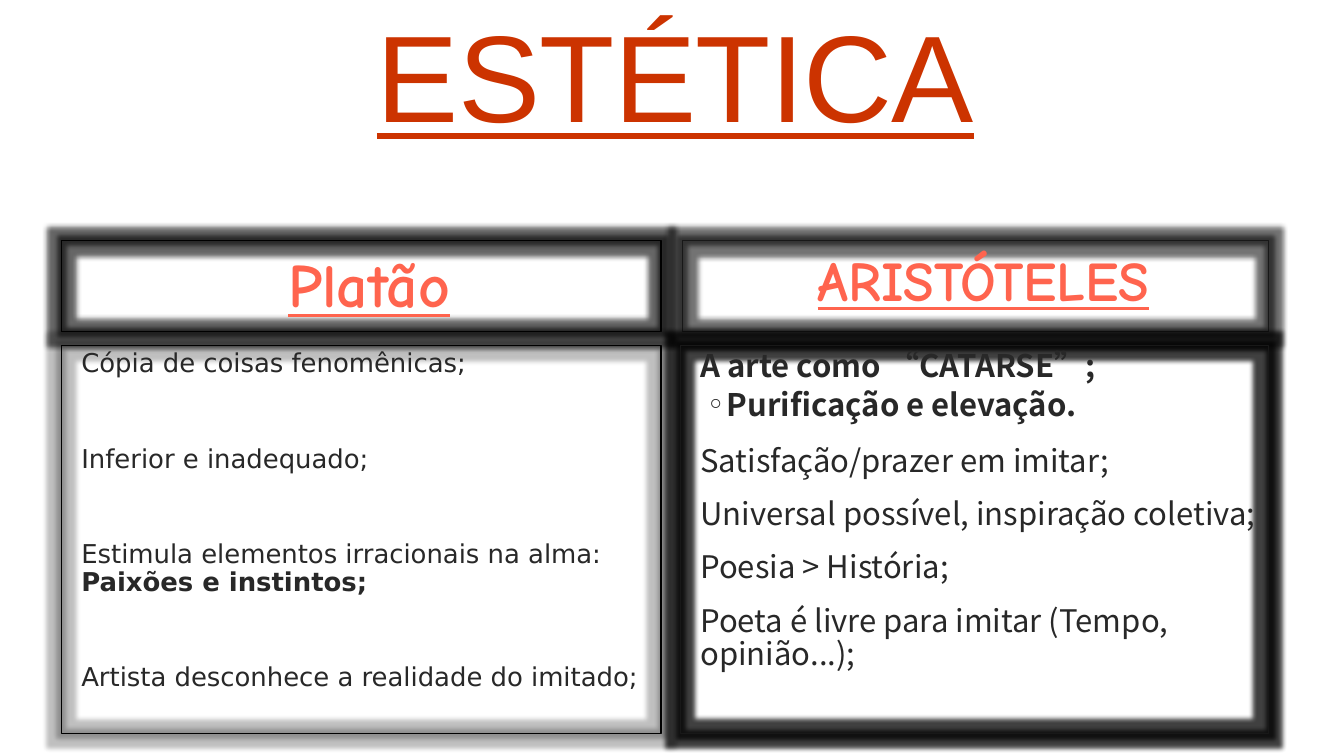
"""Build a slide comparing the aesthetics of Plato and Aristotle."""
from lxml import etree
from pptx import Presentation
from pptx.dml.color import RGBColor
from pptx.enum.shapes import MSO_SHAPE
from pptx.enum.text import MSO_ANCHOR, PP_ALIGN
from pptx.oxml.ns import qn
from pptx.util import Cm, Pt

RECT = MSO_SHAPE.RECTANGLE
TOP, MIDDLE = MSO_ANCHOR.TOP, MSO_ANCHOR.MIDDLE
LEFT, CENTER = PP_ALIGN.LEFT, PP_ALIGN.CENTER

TITLE = {
    "text": "ESTÉTICA",
    "font": {"name": "Arial", "size": Pt(88), "underline": True},
    "color": "CC3300",
}
HEADING_COLOR, BODY_COLOR = "FF644E", "282828"
GLOW_RADIUS = Cm(0.24)
HEADING_TOP, HEADING_HEIGHT = 6.07, 2.29
BODY_TOP, BODY_HEIGHT = 8.71, 9.78

PHILOSOPHERS = [
    {
        "heading": "Platão", "heading_size": 44, "heading_left": 1.55, "heading_width": 15.11,
        "body_left": 1.55, "body_width": 15.11, "border": "000000",
        "heading_glow": 60, "body_glow": 25,
        "font": "DejaVu Sans", "size": 18.5, "line_spacing": 0.9, "gap": 46,
        "ideas": [
            [("Cópia de coisas fenomênicas;", False)],
            [("Inferior e inadequado;", False)],
            [("Estimula elementos irracionais na alma: ", False), ("Paixões e instintos;", True)],
            [("Artista desconhece a realidade do imitado;", False)],
        ],
        "sub_ideas": [],
    },
    {
        "heading": "ARISTÓTELES", "heading_size": 40, "heading_left": 17.2, "heading_width": 14.76,
        "body_left": 17.15, "body_width": 14.81, "border": "181818",
        "heading_glow": 55, "body_glow": 75,
        "font": "Noto Sans CJK SC", "size": 22.2, "line_spacing": 0.9, "gap": 12,
        "ideas": [
            [("A arte como “CATARSE”;", True)],
            [("Purificação e elevação.", True)],
            [("Satisfação/prazer em imitar;", False)],
            [("Universal possível, inspiração coletiva;", False)],
            [("Poesia > História;", False)],
            [("Poeta é livre para imitar (Tempo, opinião...);", False)],
        ],
        "sub_ideas": [1],
    },
]


def rgb(value):
    return RGBColor.from_string(value)


def apply(target, values):
    for name, value in values.items():
        setattr(target, name, value)


def add_run(paragraph, text, font, color):
    run = paragraph.add_run()
    run.text = text
    apply(run.font, font)
    run.font.color.rgb = rgb(color)
    east_asian = etree.SubElement(run.font._element, qn("a:ea"))
    east_asian.set("typeface", font["name"])
    return run


def set_indent(paragraph, margin, first_line=0, bullet=None):
    properties = paragraph._p.get_or_add_pPr()
    properties.set("marL", str(Cm(margin)))
    properties.set("indent", str(Cm(first_line)))
    if bullet:
        etree.SubElement(properties, qn("a:buFont")).set("typeface", "DejaVu Sans")
        etree.SubElement(properties, qn("a:buChar")).set("char", bullet)
    else:
        etree.SubElement(properties, qn("a:buNone"))


def add_box(slide, left, top, width, height, border, glow):
    box = slide.shapes.add_shape(RECT, Cm(left), Cm(top), Cm(width), Cm(height))
    box.shadow.inherit = False
    box.fill.background()
    box.line.color.rgb = rgb(border)
    box.line.width = Pt(0.75)
    effects = box._element.spPr.find(qn("a:effectLst"))
    halo = etree.SubElement(effects, qn("a:glow"), rad=str(GLOW_RADIUS))
    shade = etree.SubElement(halo, qn("a:srgbClr"), val="000000")
    etree.SubElement(shade, qn("a:alpha"), val=str(glow * 1000))
    apply(box.text_frame, {"word_wrap": True, "vertical_anchor": TOP})
    return box.text_frame


def add_title(slide):
    frame = slide.shapes.add_textbox(Cm(3.05), Cm(0.18), Cm(27.94), Cm(3.81)).text_frame
    apply(frame, {"word_wrap": True, "vertical_anchor": MIDDLE,
                  "margin_left": 0, "margin_right": 0})
    paragraph = frame.paragraphs[0]
    apply(paragraph, {"alignment": CENTER, "line_spacing": 0.9})
    run = add_run(paragraph, TITLE["text"], TITLE["font"], TITLE["color"])
    run.font._element.set("spc", "-50")


def add_heading(slide, person):
    frame = add_box(slide, person["heading_left"], HEADING_TOP, person["heading_width"],
                    HEADING_HEIGHT, person["border"], person["heading_glow"])
    paragraph = frame.paragraphs[0]
    paragraph.alignment = CENTER
    set_indent(paragraph, 0.4)
    font = {"name": "Comic Neue", "size": Pt(person["heading_size"]),
            "bold": True, "underline": True}
    add_run(paragraph, person["heading"], font, HEADING_COLOR)


def add_ideas(slide, person):
    frame = add_box(slide, person["body_left"], BODY_TOP, person["body_width"],
                    BODY_HEIGHT, person["border"], person["body_glow"])
    for index, idea in enumerate(person["ideas"]):
        paragraph = frame.add_paragraph() if index else frame.paragraphs[0]
        is_sub = index in person["sub_ideas"]
        before = 2 if is_sub else person["gap"] if index else 0
        apply(paragraph, {"alignment": LEFT, "line_spacing": person["line_spacing"],
                          "space_before": Pt(before), "space_after": Pt(4 if is_sub else 2)})
        if is_sub:
            set_indent(paragraph, 0.92, -0.51, "◦")
        else:
            set_indent(paragraph, 0.25)
        for text, bold in idea:
            font = {"name": person["font"], "size": Pt(person["size"]), "bold": bold}
            add_run(paragraph, text, font, BODY_COLOR)


def main():
    deck = Presentation()
    apply(deck, {"slide_width": Cm(33.87), "slide_height": Cm(19.05)})
    slide = deck.slides.add_slide(deck.slide_layouts[6])
    add_title(slide)
    for person in PHILOSOPHERS:
        add_heading(slide, person)
        add_ideas(slide, person)
    deck.save("out.pptx")


if __name__ == "__main__":
    main()
